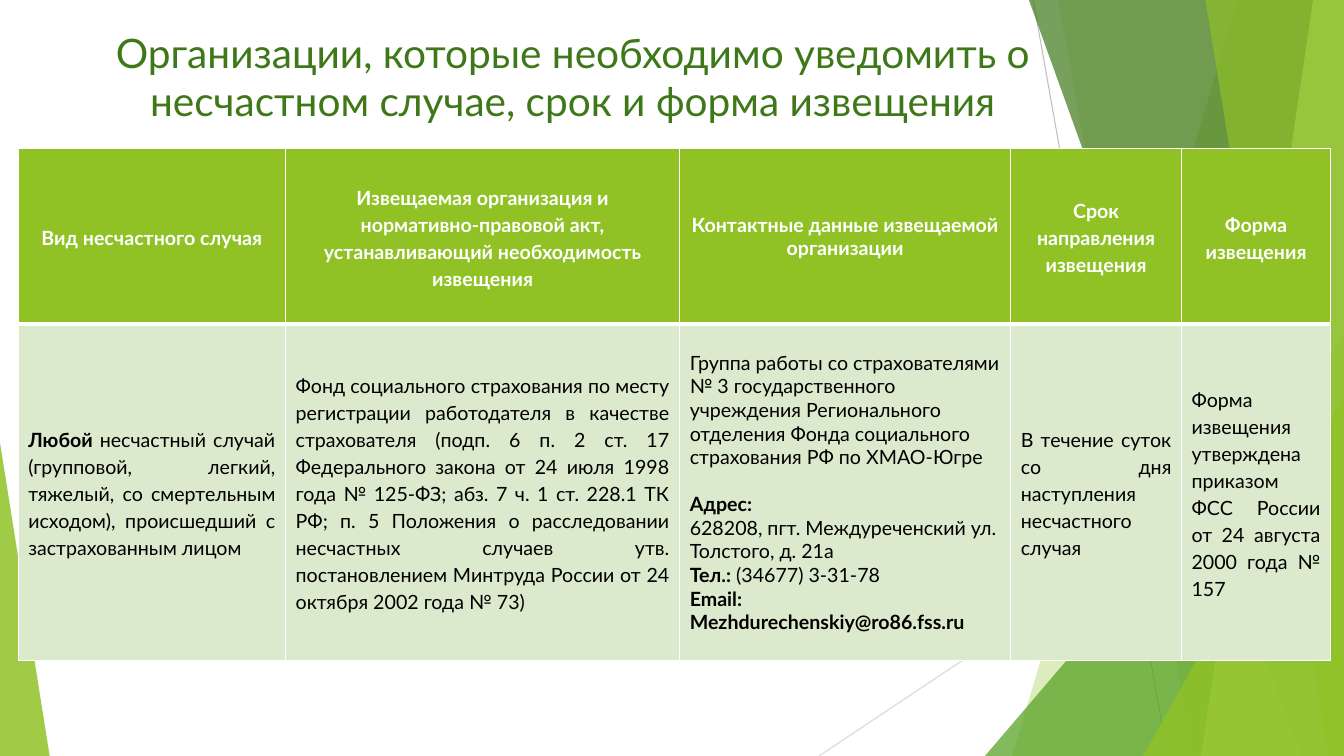
from lxml.etree import SubElement
from pptx import Presentation
from pptx.dml.color import RGBColor
from pptx.enum.shapes import MSO_CONNECTOR, MSO_SHAPE
from pptx.enum.text import MSO_ANCHOR, MSO_AUTO_SIZE, PP_ALIGN
from pptx.oxml.ns import qn
from pptx.util import Pt

COLORS = {
    "lime": "90C226",
    "green": "54A021",
    "dark": "3F7819",
    "pale": "C0E474",
    "row": "DBE9CD",
    "white": "FFFFFF",
    "black": "000000",
    "line": "BFBFBF",
    "light_line": "D9D9D9",
}
RGB = {name: RGBColor.from_string(value) for name, value in COLORS.items()}
FONT = "Lato"
WIDTH, HEIGHT = 960, 540

presentation = Presentation()
presentation.slide_width = Pt(WIDTH)
presentation.slide_height = Pt(HEIGHT)
slide = presentation.slides.add_slide(presentation.slide_layouts[5])


def add_panel(top_x, bottom_x):
    builder = slide.shapes.build_freeform(Pt(top_x), Pt(0), scale=1.0)
    corners = [(WIDTH, 0), (WIDTH, HEIGHT), (bottom_x, HEIGHT)]
    builder.add_line_segments([(Pt(x), Pt(y)) for x, y in corners], close=True)
    return builder.convert_to_shape()


def add_corner(left, top, width, peak):
    shape = slide.shapes.add_shape(
        MSO_SHAPE.ISOSCELES_TRIANGLE, Pt(left), Pt(top), Pt(width), Pt(HEIGHT - top)
    )
    shape.adjustments[0] = peak
    return shape


for x1, y1, x2, y2, color in [
    (738, 0, 834, HEIGHT, "line"),
    (WIDTH, 290, 585, HEIGHT, "light_line"),
]:
    connector = slide.shapes.add_connector(
        MSO_CONNECTOR.STRAIGHT, Pt(x1), Pt(y1), Pt(x2), Pt(y2)
    )
    connector.line.color.rgb = RGB[color]
    connector.line.width = Pt(0.75)
    SubElement(connector._element.spPr, qn("a:effectLst"))

for shape, color, opacity in [
    (add_panel(884, 723), "lime", 30),
    (add_panel(756, 852), "lime", 20),
    (add_corner(703.5, 240, 256.5, 1), "green", 72),
    (add_panel(735, 929.5), "dark", 70),
    (add_panel(938, 858), "pale", 70),
    (add_panel(861, 949), "lime", 65),
    (add_corner(816.5, 283, 143.5, 1), "lime", 80),
    (add_corner(0, 316, 35.5, 0), "lime", 85),
]:
    shape.shadow.inherit = False
    shape.line.fill.background()
    shape.fill.solid()
    shape.fill.fore_color.rgb = RGB[color]
    fill_color = shape._element.spPr.find(qn("a:solidFill")).find(qn("a:srgbClr"))
    SubElement(fill_color, qn("a:alpha"), val=str(opacity * 1000))

title = slide.shapes.title
title.left, title.top, title.width, title.height = Pt(13), Pt(16), Pt(793), Pt(77)
title.text_frame.text = (
    "Организации, которые необходимо уведомить о несчастном случае, "
    "срок и форма извещения"
)
title.text_frame.word_wrap = True
title.text_frame.auto_size = MSO_AUTO_SIZE.NONE
title.text_frame.vertical_anchor = MSO_ANCHOR.MIDDLE
paragraph = title.text_frame.paragraphs[0]
paragraph.alignment = PP_ALIGN.CENTER
paragraph.font.name = FONT
paragraph.font.size = Pt(29)
paragraph.font.color.rgb = RGB["dark"]

headers = [
    "Вид несчастного случая",
    "Извещаемая организация и нормативно-правовой акт, "
    "устанавливающий необходимость извещения",
    "Контактные данные извещаемой организации",
    "Срок направления извещения",
    "Форма извещения",
]
details = [
    [[
        ("Любой", True),
        (" несчастный случай (групповой, легкий, тяжелый, со смертельным исходом), "
         "происшедший с застрахованным лицом", False),
    ]],
    [[(
        "Фонд социального страхования по месту регистрации работодателя в качестве "
        "страхователя (подп. 6 п. 2 ст. 17 Федерального закона от 24 июля 1998 года "
        "№ 125-ФЗ; абз. 7 ч. 1 ст. 228.1 ТК РФ; п. 5 Положения о расследовании "
        "несчастных случаев утв. постановлением Минтруда России от 24 октября "
        "2002 года № 73)", False,
    )]],
    [
        [("Группа работы со страхователями № 3 государственного учреждения "
          "Регионального отделения Фонда социального страхования РФ по ХМАО-Югре", False)],
        [("Адрес:", True)],
        [("628208, пгт. Междуреченский ул. Толстого, д. 21а", False)],
        [("Тел.:", True), (" (34677) 3-31-78", False)],
        [("Email: Mezhdurechenskiy@ro86.fss.ru", True)],
    ],
    [[("В течение суток со дня наступления несчастного случая", False)]],
    [[("Форма извещения утверждена приказом ФСС России от 24 августа 2000 года № 157",
       False)]],
]
rows = [[[[(header, True)]] for header in headers], details]
column_widths = [191, 281.5, 236.5, 122, 106.5]
row_heights = [125.5, 240.5]
CONTACTS = 2

table = slide.shapes.add_table(
    len(rows), len(headers), Pt(13), Pt(106), Pt(sum(column_widths)), Pt(sum(row_heights))
).table
for column, width in zip(table.columns, column_widths):
    column.width = Pt(width)
for row, height in zip(table.rows, row_heights):
    row.height = Pt(height)

for row_index, row_cells in enumerate(rows):
    is_header = row_index == 0
    for column_index, cell_paragraphs in enumerate(row_cells):
        cell = table.cell(row_index, column_index)
        borders = {"lnL": 1, "lnR": 1, "lnT": 1 if is_header else 3, "lnB": 3 if is_header else 1}
        for edge, points in borders.items():
            border = SubElement(
                cell._tc.get_or_add_tcPr(), qn(f"a:{edge}"), w=str(Pt(points))
            )
            border_fill = SubElement(border, qn("a:solidFill"))
            SubElement(border_fill, qn("a:srgbClr"), val=COLORS["white"])
        cell.fill.solid()
        cell.fill.fore_color.rgb = RGB["lime" if is_header else "row"]
        cell.vertical_anchor = MSO_ANCHOR.MIDDLE

        for index, runs in enumerate(cell_paragraphs):
            frame = cell.text_frame
            paragraph = frame.paragraphs[0] if index == 0 else frame.add_paragraph()
            paragraph.font.name = FONT
            paragraph.font.size = Pt(14)
            paragraph.font.color.rgb = RGB["white" if is_header else "black"]
            if is_header:
                paragraph.alignment = PP_ALIGN.CENTER
            elif column_index != CONTACTS:
                paragraph.alignment = PP_ALIGN.JUSTIFY
            if column_index != CONTACTS:
                paragraph.line_spacing = 1.15
            elif index == 1:
                paragraph.space_before = Pt(17)
            for text, bold in runs:
                run = paragraph.add_run()
                run.text = text
                run.font.bold = bold

presentation.save("out.pptx")
